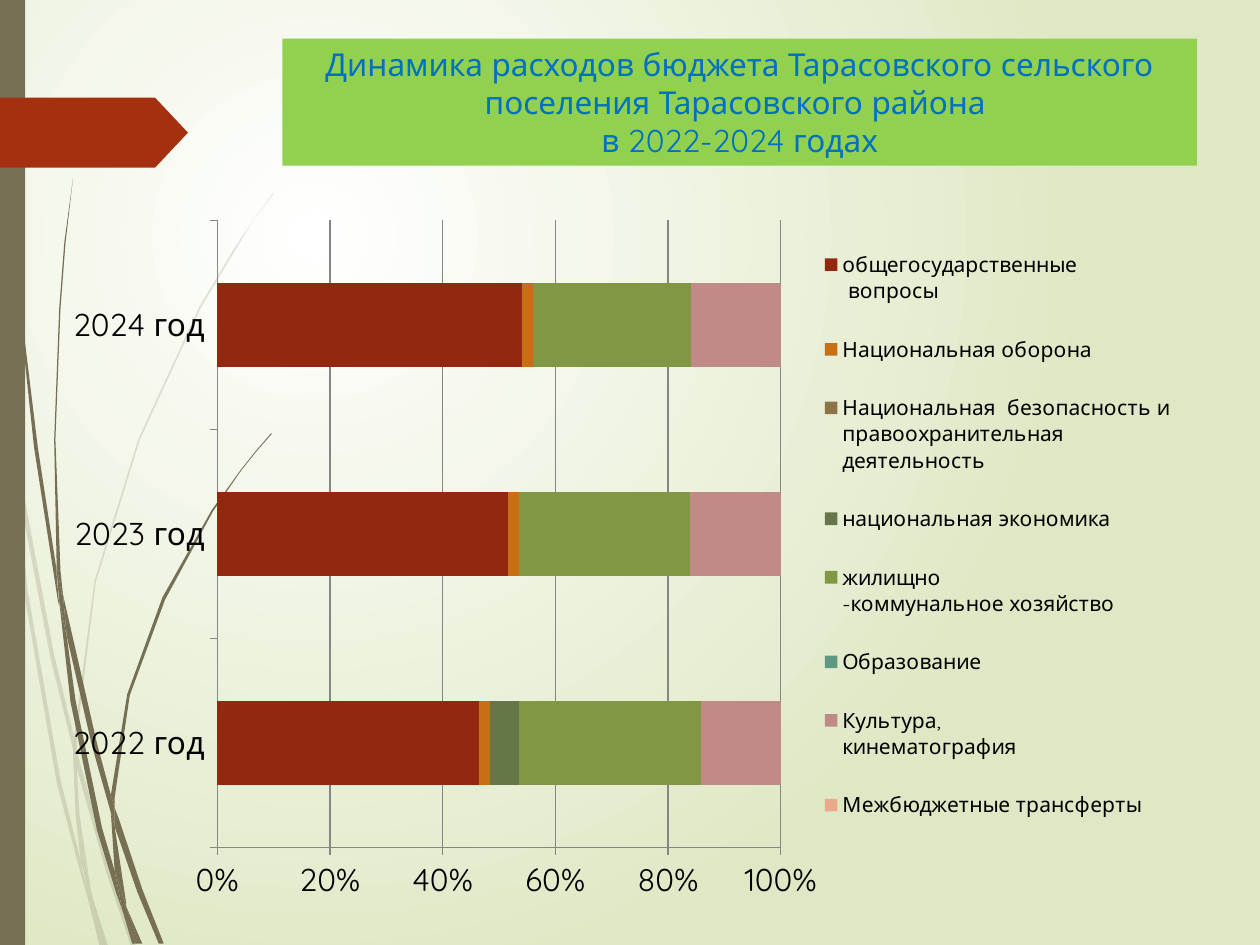
from lxml.etree import SubElement
from pptx import Presentation
from pptx.chart.data import CategoryChartData
from pptx.dml.color import RGBColor
from pptx.enum.chart import XL_CHART_TYPE, XL_LEGEND_POSITION, XL_TICK_MARK
from pptx.enum.shapes import MSO_SHAPE
from pptx.enum.text import MSO_ANCHOR, PP_ALIGN
from pptx.oxml import parse_xml
from pptx.oxml.ns import nsdecls, qn
from pptx.util import Cm, Pt

THEME = {
    "font": "Quicksand",
    "title_size": 18, "axis_size": 18, "legend_size": 12,
    "title": "0070C0", "title_fill": "92D050", "text": "000000",
    "stem": "766F54", "arrow": "A53010", "axis": "868686",
    "glow": "FFFFFF", "edge": "DFE8C4",
}

TITLE = ("Динамика расходов бюджета Тарасовского сельского поселения "
         "Тарасовского района \vв 2022-2024 годах")
YEARS = ["2022 год", "2023 год", "2024 год"]
EXPENSES = [
    ("общегосударственные\n вопросы", (46, 51, 54), "92280F"),
    ("Национальная оборона", (2, 2, 2), "C66F14"),
    ("Национальная  безопасность и правоохранительная деятельность", (0, 0, 0), "8D7446"),
    ("национальная экономика", (5, 0, 0), "657749"),
    ("жилищно\n-коммунальное хозяйство", (32, 30, 28), "819743"),
    ("Образование", (0, 0, 0), "5E9981"),
    ("Культура, \nкинематография", (14, 16, 16), "C08B86"),
    ("Межбюджетные трансферты", (0, 0, 0), "E9AA8C"),
]

STEM_UNIT = Cm(2.54) / 100
PALE_STEMS = [
    [(8, 350), (6, 322), (0, 282), (0, 299), (7, 344)],
    [(40, 522), (59, 599), (59, 586), (43, 520), (10, 345), (12, 376)],
    [(64, 607), (61, 596), (61, 610), (85, 694), (104, 751), (108, 751), (88, 692)],
    [(83, 751), (86, 751), (73, 711)],
    [(64, 683), (48, 619), (22, 469), (12, 376), (8, 350), (19, 470), (45, 621),
     (64, 693), (70, 714), (69, 707)],
    [(58, 599), (60, 646), (64, 683), (67, 692), (73, 711), (72, 706), (63, 646),
     (61, 610), (61, 608)],
    [(61, 584), (76, 462), (111, 349), (159, 245), (187, 198), (201, 175), (217, 154),
     (217, 153), (201, 175), (186, 197), (158, 244), (110, 348), (75, 461), (59, 584),
     (59, 586), (61, 596)],
    [(70, 714), (79, 751), (82, 751)],
    [(61, 608), (61, 610), (61, 596), (59, 586), (58, 599)],
    [(67, 692), (65, 683), (69, 707), (70, 714), (82, 751), (83, 751), (73, 711)],
]
DARK_STEMS = [
    [(5, 110), (14, 233), (27, 355), (46, 477), (47, 481), (45, 457), (45, 453),
     (30, 355), (15, 232), (6, 109), (4, 48), (3, 0), (2, 0), (3, 48)],
    [(73, 592), (88, 645), (88, 633), (88, 631), (77, 590), (50, 472), (53, 505)],
    [(94, 649), (91, 641), (91, 656), (109, 708), (126, 749), (130, 749), (113, 706)],
    [(91, 691), (81, 657), (60, 556), (53, 505), (47, 477), (56, 557), (77, 659),
     (92, 708), (97, 722), (96, 717)],
    [(50, 472), (48, 453), (44, 349), (48, 245), (52, 193), (58, 141), (51, 193),
     (47, 245), (43, 349), (45, 449), (49, 472)],
    [(110, 749), (113, 749), (100, 719)],
    [(47, 477), (53, 505), (50, 472), (49, 472), (45, 449), (45, 453)],
    [(91, 633), (103, 552), (131, 476), (169, 406), (191, 374), (203, 359), (216, 344),
     (215, 344), (203, 358), (191, 373), (168, 405), (129, 474), (101, 551), (88, 631),
     (91, 641)],
    [(97, 722), (105, 749), (108, 749)],
    [(88, 645), (91, 691), (96, 706), (100, 719), (100, 716), (91, 656), (90, 651)],
    [(88, 645), (90, 651), (91, 656), (91, 641), (88, 631), (88, 633)],
    [(96, 706), (91, 691), (96, 717), (97, 722), (108, 749), (110, 749), (100, 719)],
]

CHART_SIZE = (23.42, 14.22)
PLOT_BOX = (3.39, 0.28, 11.36, 12.65)
LEGEND_BOX = (15.26, 0.26, 7.73, 12.73)


def color(name):
    return RGBColor.from_string(THEME.get(name, name))


def paint(shape, name):
    shape.shadow.inherit = False
    shape.fill.solid()
    shape.fill.fore_color.rgb = color(name)
    shape.line.fill.background()


def style_font(font, size, name):
    font.name = THEME["font"]
    font.size = Pt(THEME[size])
    font.color.rgb = color(name)


def add_stem(slide, outline, opacity):
    builder = slide.shapes.build_freeform(*outline[0], scale=STEM_UNIT)
    builder.add_line_segments(outline[1:], close=True)
    stem = builder.convert_to_shape()
    paint(stem, "stem")
    if opacity < 100:
        tint = stem.fill._xPr.find(".//" + qn("a:srgbClr"))
        SubElement(tint, qn("a:alpha"), val=str(opacity * 1000))


def add_background(slide):
    slide.background.fill.solid()
    plain = slide.element.find(".//" + qn("p:bgPr") + "/" + qn("a:solidFill"))
    glow = parse_xml(
        f'<a:gradFill {nsdecls("a")} rotWithShape="1"><a:gsLst>'
        f'<a:gs pos="0"><a:srgbClr val="{THEME["glow"]}"/></a:gs>'
        f'<a:gs pos="100000"><a:srgbClr val="{THEME["edge"]}"/></a:gs></a:gsLst>'
        '<a:path path="circle"><a:fillToRect l="50000" t="50000" r="100000" b="100000"/>'
        '</a:path></a:gradFill>')
    plain.getparent().replace(plain, glow)


def add_decor(slide):
    for stems, opacity in ((PALE_STEMS, 20), (DARK_STEMS, 100)):
        for outline in stems:
            add_stem(slide, outline, opacity)
    band = slide.shapes.add_shape(MSO_SHAPE.RECTANGLE, 0, 0, Cm(0.51), Cm(19.05))
    paint(band, "stem")
    arrow = slide.shapes.add_shape(MSO_SHAPE.PENTAGON, 0, Cm(1.97), Cm(3.79), Cm(1.41))
    arrow.adjustments[0] = 0.47
    paint(arrow, "arrow")


def place(part, box, before, target=""):
    for old in part.findall(qn("c:layout")):
        part.remove(old)
    modes = "".join(f'<c:{key}Mode val="edge"/>' for key in "xy")
    sizes = "".join(f'<c:{key} val="{length / whole}"/>'
                    for key, length, whole in zip("xywh", box, CHART_SIZE * 2))
    part.find(qn(before)).addprevious(parse_xml(
        f'<c:layout {nsdecls("c")}><c:manualLayout>{target}{modes}{sizes}'
        '</c:manualLayout></c:layout>'))


def add_expenses(slide):
    data = CategoryChartData()
    data.categories = YEARS
    for name, shares, _ in EXPENSES:
        data.add_series(name, shares)
    width, height = map(Cm, CHART_SIZE)
    chart = slide.shapes.add_chart(XL_CHART_TYPE.BAR_STACKED_100, Cm(0.99), Cm(4.16),
                                   width, height, data).chart
    style_font(chart.font, "axis_size", "text")
    chart.has_title = False
    bars = chart.plots[0]
    bars.gap_width, bars.overlap = 150, 100
    bars.vary_by_categories = False
    for series, (_, _, fill) in zip(bars.series, EXPENSES):
        series.format.fill.solid()
        series.format.fill.fore_color.rgb = color(fill)
        series.invert_if_negative = False
    years, percent = chart.category_axis, chart.value_axis
    percent.has_major_gridlines = True
    percent.major_unit = 0.2
    percent.tick_labels.number_format = "0%"
    percent.tick_labels.number_format_is_linked = False
    for line in (years.format.line, percent.format.line, percent.major_gridlines.format.line):
        line.color.rgb = color("axis")
        line.width = Pt(0.75)
    for axis in (years, percent):
        axis.major_tick_mark = XL_TICK_MARK.OUTSIDE
        style_font(axis.tick_labels.font, "axis_size", "text")
    chart.has_legend = True
    legend = chart.legend
    legend.position = XL_LEGEND_POSITION.RIGHT
    legend.include_in_layout = False
    style_font(legend.font, "legend_size", "text")
    chart_xml = chart.element
    place(chart_xml.find(".//" + qn("c:plotArea")), PLOT_BOX, "c:barChart",
          '<c:layoutTarget val="inner"/>')
    place(chart_xml.find(".//" + qn("c:legend")), LEGEND_BOX, "c:overlay")


def add_title(slide):
    title = slide.shapes.title
    title.left, title.top, title.width, title.height = Cm(5.69), Cm(0.78), Cm(18.44), Cm(2.56)
    paint(title, "title_fill")
    frame = title.text_frame
    frame.text = TITLE
    frame.word_wrap = True
    frame.vertical_anchor = MSO_ANCHOR.MIDDLE
    heading = frame.paragraphs[0]
    heading.alignment = PP_ALIGN.CENTER
    for run in heading.runs:
        style_font(run.font, "title_size", "title")


def main():
    deck = Presentation()
    deck.slide_width, deck.slide_height = Cm(25.4), Cm(19.05)
    slide = deck.slides.add_slide(deck.slide_layouts[5])
    add_background(slide)
    add_decor(slide)
    add_expenses(slide)
    add_title(slide)
    deck.save("out.pptx")


if __name__ == "__main__":
    main()
